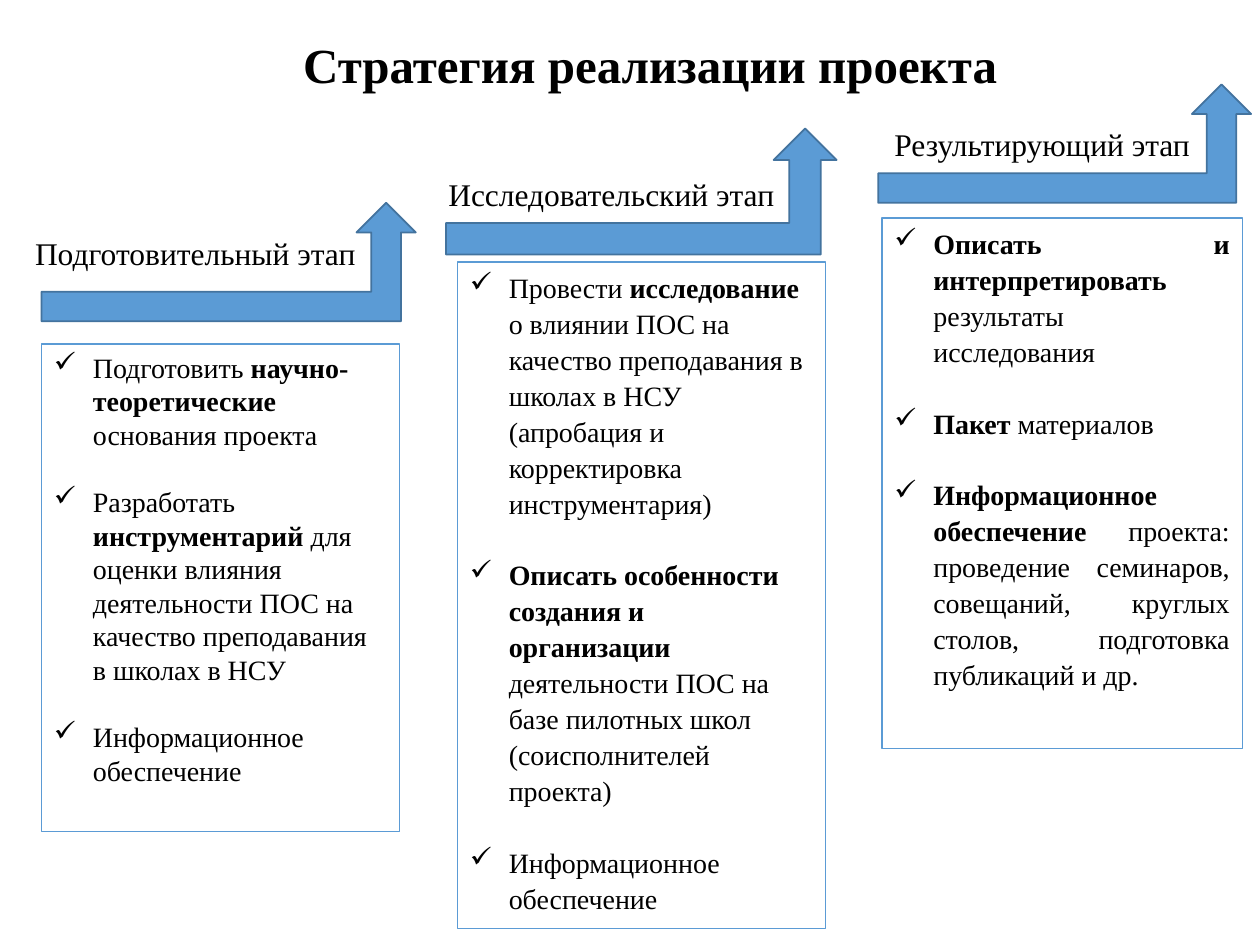
import pptx
import pptx.util
import pptx.dml.color
import pptx.enum.shapes
import pptx.enum.text
from lxml import etree

Inches, Pt = pptx.util.Inches, pptx.util.Pt
ALIGN = pptx.enum.text.PP_ALIGN
ANCHOR = pptx.enum.text.MSO_ANCHOR
SHAPE = pptx.enum.shapes.MSO_SHAPE

BLUE = pptx.dml.color.RGBColor(0x5B, 0x9B, 0xD5)
DARK_BLUE = pptx.dml.color.RGBColor(0x43, 0x73, 0x9E)
BLACK = pptx.dml.color.RGBColor(0, 0, 0)
FONT = "Times New Roman"
INDENT = Inches(0.31)
TASK_SIZE = 16
TASK_LINE = 19.2  # points taken by one single-spaced line of task text

# Boxes are left, top, width, height; label and tasks are offset from the arrow.
# Each task is a list of (text, bold) runs.
STAGES = [
    dict(
        name="Подготовительный этап",
        arrow=(0.33, 1.61, 2.97, 0.94),
        label=(-0.15, 0.2, 2.8, 0.4),
        task_box=(0, 1.12, 2.84, 3.87),
        align=ALIGN.LEFT, spacing=1.0,
        tasks=[
            [("Подготовить ", False), ("научно-теоретические ", True),
             ("основания проекта", False)],
            [("Разработать ", False), ("инструментарий", True),
             (" для оценки влияния деятельности ПОС на качество "
              "преподавания в школах в НСУ", False)],
            [("Информационное обеспечение", False)],
        ],
    ),
    dict(
        name="Исследовательский этап",
        arrow=(3.54, 1.02, 3.1, 1),
        label=(-0.08, 0.32, 3.07, 0.4),
        task_box=(0.09, 1.06, 2.92, 5.29),
        align=ALIGN.LEFT, spacing=1.07,
        tasks=[
            [("Провести ", False), ("исследование ", True),
             ("о влиянии ПОС на качество преподавания в школах в НСУ "
              "(апробация и корректировка инструментария)", False)],
            [("Описать особенности создания и организации", True),
             (" деятельности ПОС на базе пилотных школ "
              "(соисполнителей проекта)", False)],
            [("Информационное обеспечение", False)],
        ],
    ),
    dict(
        name="Результирующий этап",
        arrow=(6.97, 0.67, 2.96, 0.94),
        label=(0.03, 0.27, 2.8, 0.4),
        task_box=(0.03, 1.06, 2.86, 4.21),
        align=ALIGN.JUSTIFY, spacing=1.07,
        tasks=[
            [("Описать и интерпретировать ", True),
             ("результаты исследования", False)],
            [("Пакет", True), (" материалов", False)],
            [("Информационное обеспечение", True),
             (" проекта: проведение семинаров, совещаний, круглых столов, "
              "подготовка публикаций и др.", False)],
        ],
    ),
]


def add_run(paragraph, text, size, bold=False):
    run = paragraph.add_run()
    run.text = text
    run.font.name = FONT
    run.font.size = Pt(size)
    run.font.bold = bold
    run.font.color.rgb = BLACK


def add_check_bullet(paragraph):
    properties = paragraph._p.get_or_add_pPr()
    properties.set("marL", str(INDENT))
    properties.set("indent", str(-INDENT))
    bullet = etree.SubElement(properties, pptx.oxml.ns.qn("a:buChar"))
    bullet.set("char", "✓")


def add_title(slide, box):
    title = slide.shapes.title
    title.left, title.top, title.width, title.height = map(Inches, box)
    frame = title.text_frame
    frame.word_wrap = True
    frame.vertical_anchor = ANCHOR.BOTTOM
    frame.margin_left = frame.margin_right = Inches(0.07)
    frame.margin_top = frame.margin_bottom = Inches(0.04)
    heading = frame.paragraphs[0]
    heading.alignment = ALIGN.CENTER
    heading.line_spacing = 0.9
    add_run(heading, "Стратегия реализации проекта", 28, bold=True)


def add_arrow(slide, box):
    arrow = slide.shapes.add_shape(SHAPE.BENT_UP_ARROW, *map(Inches, box))
    arrow.shadow.inherit = False
    arrow.fill.solid()
    arrow.fill.fore_color.rgb = BLUE
    arrow.line.color.rgb = DARK_BLUE
    arrow.line.width = Pt(1)


def add_label(slide, box, name):
    frame = slide.shapes.add_textbox(*map(Inches, box)).text_frame
    frame.word_wrap = True
    add_run(frame.paragraphs[0], name, 18)


def add_tasks(slide, box, tasks, align, spacing):
    panel = slide.shapes.add_shape(SHAPE.RECTANGLE, *map(Inches, box))
    panel.shadow.inherit = False
    panel.fill.background()
    panel.line.color.rgb = BLUE
    panel.line.width = Pt(0.75)
    frame = panel.text_frame
    frame.word_wrap = True
    frame.vertical_anchor = ANCHOR.TOP
    for index, runs in enumerate(tasks):
        task = frame.add_paragraph() if index else frame.paragraphs[0]
        task.alignment = align
        task.line_spacing = spacing
        task.space_before = Pt(round(TASK_LINE * spacing, 1) if index else 0)
        add_check_bullet(task)
        for text, bold in runs:
            add_run(task, text, TASK_SIZE, bold)


def add_stage(slide, stage):
    left, top = stage["arrow"][:2]

    def from_arrow(box):
        dx, dy, width, height = box
        return left + dx, top + dy, width, height

    add_arrow(slide, stage["arrow"])
    add_tasks(slide, from_arrow(stage["task_box"]), stage["tasks"],
              stage["align"], stage["spacing"])
    add_label(slide, from_arrow(stage["label"]), stage["name"])


def main():
    deck = pptx.Presentation()
    deck.slide_width, deck.slide_height = Inches(10), Inches(7.5)
    slide = deck.slides.add_slide(deck.slide_layouts[5])
    add_title(slide, (0.85, 0.19, 8.62, 0.6))
    for stage in STAGES:
        add_stage(slide, stage)
    deck.save("out.pptx")


if __name__ == "__main__":
    main()
